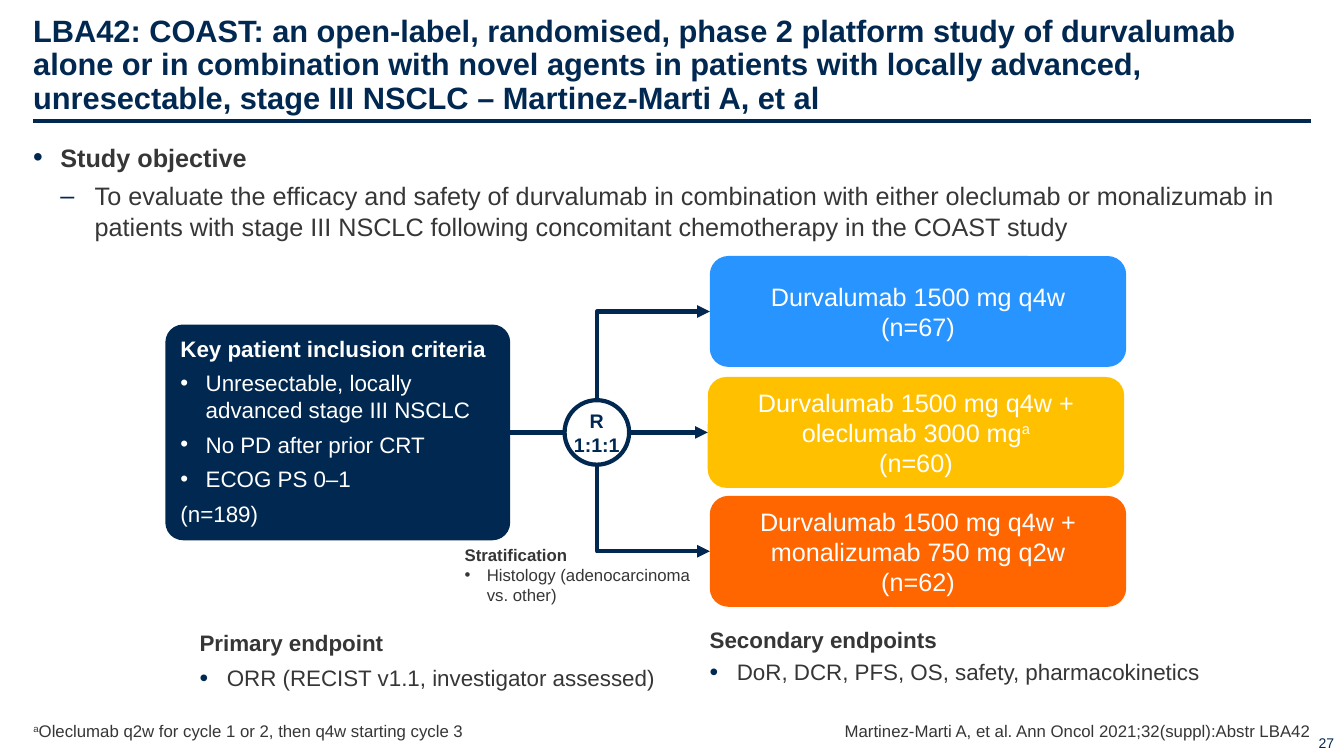
from lxml import etree
from pptx import Presentation
from pptx.dml.color import RGBColor
from pptx.enum.shapes import MSO_CONNECTOR, MSO_SHAPE
from pptx.enum.text import MSO_ANCHOR, PP_ALIGN
from pptx.oxml.ns import qn
from pptx.util import Inches, Pt

ROUND, OVAL = MSO_SHAPE.ROUNDED_RECTANGLE, MSO_SHAPE.OVAL
STRAIGHT, ELBOW = MSO_CONNECTOR.STRAIGHT, MSO_CONNECTOR.ELBOW
TOP, MIDDLE, BOTTOM = MSO_ANCHOR.TOP, MSO_ANCHOR.MIDDLE, MSO_ANCHOR.BOTTOM
LEFT, CENTER, RIGHT = PP_ALIGN.LEFT, PP_ALIGN.CENTER, PP_ALIGN.RIGHT
NAVY, GREY, WHITE = "002850", "363636", "FFFFFF"
FONT = "Arial"


def rgb(code):
    return RGBColor.from_string(code)


def child(parent, tag, **attrs):
    return etree.SubElement(parent, qn(tag), attrs)


class Board:
    """Holds the slide and its style; each method adds one kind of element."""

    def __init__(self, slide):
        self.slide = slide
        self.shapes = slide.shapes

    def setup(self, frame, pad, anchor, wrap=True):
        frame.word_wrap = wrap
        frame.vertical_anchor = anchor
        frame.margin_left = frame.margin_right = Inches(pad[0])
        frame.margin_top = frame.margin_bottom = Inches(pad[1])

    def text(self, x, y, w, h, pad=(0.1, 0.05), anchor=TOP):
        frame = self.shapes.add_textbox(*map(Inches, (x, y, w, h))).text_frame
        self.setup(frame, pad, anchor)
        return frame

    def shape(self, kind, x, y, w, h, fill=None, line=None, round=None,
              pad=(0.1, 0.05), anchor=MIDDLE, wrap=True):
        item = self.shapes.add_shape(kind, *map(Inches, (x, y, w, h)))
        item.shadow.inherit = False
        if fill:
            item.fill.solid()
            item.fill.fore_color.rgb = rgb(fill)
        else:
            item.fill.background()
        if line:
            item.line.color.rgb = rgb(line)
            item.line.width = Pt(3)
        else:
            item.line.fill.background()
        if round:
            item.adjustments[0] = round
        self.setup(item.text_frame, pad, anchor, wrap)
        return item

    def para(self, frame, text, size, color=GREY, bold=False, align=LEFT,
             after=0, spacing=None, bullet=None, left=0, hang=0,
             mark=None, scale=None):
        """Add a paragraph; text between carets is raised."""
        par = frame.paragraphs[0]
        if par.runs:
            par = frame.add_paragraph()
        for i, part in enumerate(text.split("^")):
            if part:
                run = par.add_run()
                run.text = part
                if i % 2:
                    run.font._element.set("baseline", "30000")
        par.alignment = align
        par.space_before, par.space_after = Pt(0), Pt(after)
        if spacing:
            par.line_spacing = spacing
        if bullet:
            props = par._p.get_or_add_pPr()
            props.set("marL", str(Inches(left)))
            props.set("indent", str(-Inches(hang)))
            if mark:
                child(child(props, "a:buClr"), "a:srgbClr", val=mark)
            if scale:
                child(props, "a:buSzPct", val=str(scale * 1000))
            child(props, "a:buFont", typeface=FONT)
            child(props, "a:buChar", char=bullet)
        font = par.font
        font.name, font.size, font.bold = FONT, Pt(size), bold
        font.color.rgb = rgb(color)

    def line(self, start, end, width=3, arrow=False, kind=STRAIGHT):
        link = self.shapes.add_connector(kind, *map(Inches, (*start, *end)))
        link.line.color.rgb = rgb(NAVY)
        link.line.width = Pt(width)
        if arrow:
            child(link.line._get_or_add_ln(), "a:tailEnd", type="triangle")
        child(link._element.spPr, "a:effectLst")
        return link

    def bend(self, start, end):
        """Arrow that runs vertically from start, then right to end."""
        link = self.line(start, end, arrow=True, kind=ELBOW)
        (x1, y1), (x2, y2) = start, end
        w, h = abs(y2 - y1), x2 - x1
        link.left = Inches((x1 + x2 - w) / 2)
        link.top = Inches((y1 + y2 - h) / 2)
        link.width, link.height = Inches(w), Inches(h)
        props = link._element.spPr
        rise = y2 < y1
        form = props.find(qn("a:xfrm"))
        form.set("rot", "5400000" if rise else "16200000")
        form.set("flipH", "1")
        form.set("flipV", "1" if rise else "0")
        props.find(qn("a:prstGeom")).set("prst", "bentConnector2")


def main():
    deck = Presentation()
    deck.slide_width, deck.slide_height = Inches(13.33), Inches(7.5)
    board = Board(deck.slides.add_slide(deck.slide_layouts[6]))
    para = board.para
    dot = dict(bullet="•", left=0.27, hang=0.27, mark=NAVY, scale=110)

    board.line((0.33, 1.2), (13, 1.2), 2.25)
    page = board.text(12.68, 7.1, 0.65, 0.4, anchor=BOTTOM)
    para(page, "27", 10, NAVY, align=RIGHT)
    title = board.text(0.33, 0.12, 12.67, 1.03, (0, 0), BOTTOM)
    para(title, "LBA42: COAST: an open-label, randomised, phase 2 platform "
         "study of durvalumab alone or in combination with novel agents in "
         "patients with locally advanced, unresectable, stage III NSCLC – "
         "Martinez-Marti A, et al", 22, NAVY, True, spacing=0.9)

    aim = board.text(0.33, 1.36, 12.67, 1.1, (0, 0.05))
    para(aim, "Study objective", 18, bold=True, after=6, **dot)
    para(aim, "To evaluate the efficacy and safety of durvalumab in "
         "combination with either oleclumab or monalizumab in patients with "
         "stage III NSCLC following concomitant chemotherapy in the COAST "
         "study", 18, after=6, bullet="–", left=0.61, hang=0.34, mark=NAVY)

    ends = [
        ("Primary endpoint", "ORR (RECIST v1.1, investigator assessed)",
         (1.98, 6.19, 4.74, 0.69), 0, 6),
        ("Secondary endpoints", "DoR, DCR, PFS, OS, safety, pharmacokinetics",
         (6.94, 6.16, 5.48, 0.69), 0.1, 4),
    ]
    for head, item, place, side, gap in ends:
        frame = board.text(*place, (side, 0.05))
        para(frame, head, 16, bold=True, after=gap)
        para(frame, item, 16, **dot)

    strata = board.text(4.51, 5.35, 2.5, 0.98)
    para(strata, "Stratification", 12, bold=True)
    para(strata, "Histology (adenocarcinoma vs. other)", 12,
         bullet="•", left=0.22, hang=0.22)

    entry = board.shape(ROUND, 1.64, 3.22, 3.42, 2.14, NAVY, round=0.082,
                        anchor=TOP)
    frame = entry.text_frame
    para(frame, "Key patient inclusion criteria", 16, WHITE, True, after=5.5)
    for rule in ("Unresectable, locally advanced stage III NSCLC",
                 "No PD after prior CRT", "ECOG PS 0–1"):
        para(frame, rule, 16, WHITE, after=5.5,
             bullet="•", left=0.25, hang=0.25)
    para(frame, "(n=189)", 16, WHITE)

    split = board.shape(OVAL, 5.6, 3.97, 0.64, 0.64, line=NAVY, wrap=False)
    for word in ("R", "1:1:1"):
        para(split.text_frame, word, 14, NAVY, True, CENTER)

    arms = [
        ("Durvalumab 1500 mg q4w", 67, 7.04, 2.54, "2894FF"),
        ("Durvalumab 1500 mg q4w + oleclumab 3000 mg^a^", 60, 7.02, 3.74,
         "FFC000"),
        ("Durvalumab 1500 mg q4w + monalizumab 750 mg q2w", 62, 7.04, 4.92,
         "FF6600"),
    ]
    boxes = []
    for drug, count, x, y, fill in arms:
        box = board.shape(ROUND, x, y, 4.13, 1.1, fill, round=0.167,
                          pad=(0.1, 0))
        para(box.text_frame, drug, 18, WHITE, align=CENTER)
        para(box.text_frame, f"(n={count})", 18, WHITE, align=CENTER)
        boxes.append(box)

    board.line((5.06, 4.29), (5.6, 4.29)).begin_connect(entry, 3)
    board.line((6.24, 4.29), (7.02, 4.29), arrow=True).end_connect(boxes[1], 1)
    board.bend((5.92, 3.97), (7.04, 3.09))
    board.bend((5.92, 4.61), (7.04, 5.47))

    note = board.text(0.33, 6.82, 6.02, 0.53, (0, 0), BOTTOM)
    para(note, "^a^Oleclumab q2w for cycle 1 or 2, then q4w starting cycle 3",
         12)
    cite = board.text(6.98, 7.13, 6.02, 0.22, (0, 0), BOTTOM)
    para(cite, "Martinez-Marti A, et al. Ann Oncol 2021;32(suppl):Abstr LBA42",
         12, align=RIGHT)
    deck.save("out.pptx")


if __name__ == "__main__":
    main()
